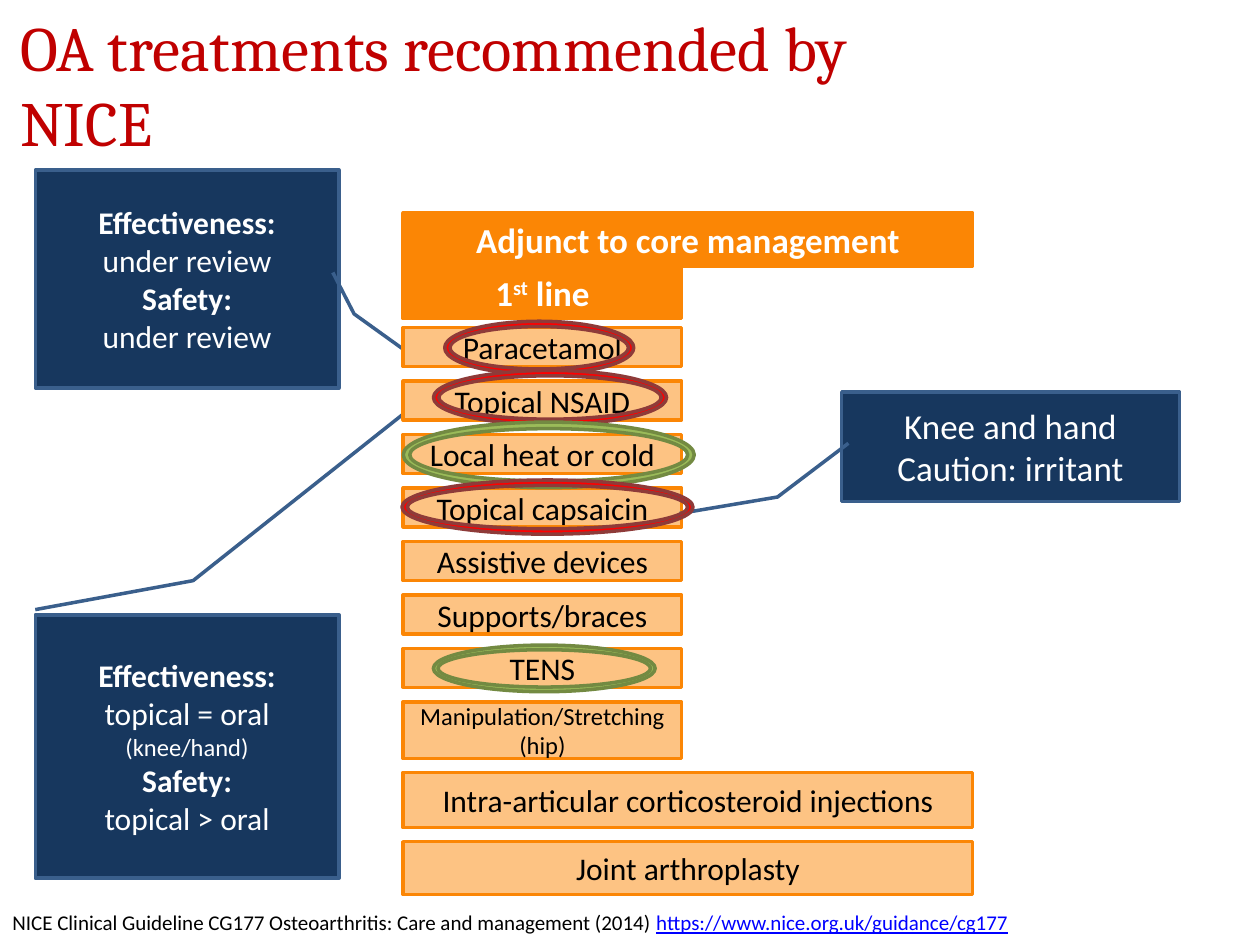
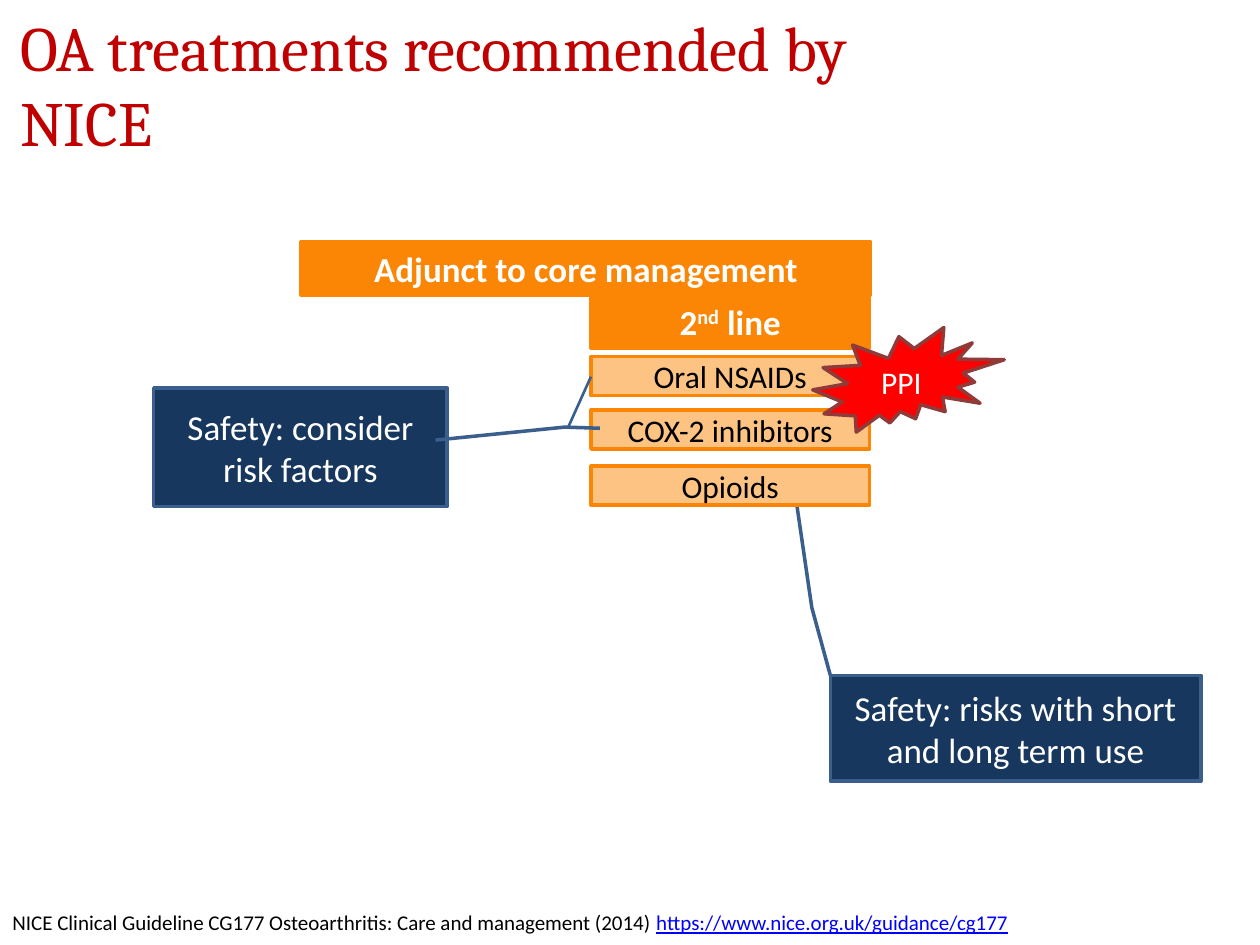
from dataclasses import dataclass

from lxml.etree import SubElement
from pptx import Presentation
from pptx.dml.color import RGBColor as RGB
from pptx.enum.shapes import MSO_CONNECTOR, MSO_SHAPE as SHAPE
from pptx.enum.text import MSO_ANCHOR as ANCHOR, MSO_AUTO_SIZE, PP_ALIGN as ALIGN
from pptx.oxml.ns import qn
from pptx.util import Inches, Pt


@dataclass(frozen=True)
class Theme:
    title_font: str = "Cambria"
    body_font: str = "Calibri"
    title: str = "C00000"
    white: str = "FFFFFF"
    black: str = "000000"
    link: str = "0000FF"
    navy: str = "17375E"
    navy_edge: str = "3A5F8C"
    leader: str = "376092"
    orange: str = "FB8605"
    peach: str = "FDC383"
    red: str = "FF0000"
    red_edge: str = "8E3B39"
    green: str = "9BBB59"
    green_edge: str = "738A42"
    title_size: int = 36
    large: int = 20
    medium: int = 18
    small: int = 14
    footer_size: int = 12
    edge: float = 2
    thin: float = 1.5


THEME = Theme()

# Kind of box: fill, edge
LOOKS = {
    "callout": (THEME.navy, THEME.navy_edge),
    "header": (THEME.orange, THEME.orange),
    "row": (THEME.peach, THEME.orange),
    "red": (THEME.red, THEME.red_edge),
    "green": (THEME.green, THEME.green_edge),
}

# Text style: font values
STYLES = {
    "title": {"name": THEME.title_font, "size": THEME.title_size, "color": THEME.title},
    "header": {"size": THEME.large, "color": THEME.white, "bold": True},
    "row": {"size": THEME.medium, "color": THEME.black},
    "small row": {"size": THEME.small, "color": THEME.black},
    "note": {"size": THEME.large, "color": THEME.white},
    "label": {"size": THEME.medium, "color": THEME.white, "bold": True},
    "value": {"size": THEME.medium, "color": THEME.white},
    "detail": {"size": THEME.small, "color": THEME.white},
    "source": {"size": THEME.footer_size, "color": THEME.black},
    "link": {"size": THEME.footer_size, "color": THEME.link, "underline": True},
}

TITLE = "OA treatments recommended by NICE"
TITLE_AREA = (0.06, 0.04, 7.81, 1.25)
HEADING = "Adjunct to core management"
SOURCE = [
    ("NICE Clinical Guideline CG177 Osteoarthritis: Care and management (2014) ", "source"),
    ("https://www.nice.org.uk/guidance/cg177", "link"),
]
SOURCE_AREA = (0, 7.17, 10, 0.3)

COLUMN_WIDTH, FULL_WIDTH = 2.21, 4.52
HEADER_HEIGHT, ROW_HEIGHT = 0.42, 0.31
FIRST_ROW_DROP = 0.91
ROW_PITCH = 2.97 / 7

# Callout: area, leader as (y, x) shares of the box, paragraphs of (text, style)
SLIDES = [
    {
        "heading": (3.2, 1.69),
        "column": 3.2,
        "ordinal": ("1", "st"),
        "rows": ["Paracetamol", "Topical NSAID", "Local heat or cold", "Topical capsaicin",
                 "Assistive devices", "Supports/braces", "TENS"],
        "tall_rows": [
            ("Manipulation/Stretching (hip)", (3.2, 5.57, COLUMN_WIDTH, 0.45), "small row"),
            ("Intra-articular corticosteroid injections", (3.2, 6.13, FULL_WIDTH, 0.44), "row"),
            ("Joint arthroplasty", (3.2, 6.68, FULL_WIDTH, 0.42), "row"),
        ],
        "back_callouts": [
            ((0.28, 4.88, 2.41, 2.09), (-0.02, 0, -0.13, 0.52, -0.77, 1.22), [
                [("Effectiveness:", "label")],
                [("topical = oral ", "value"), ("(knee/hand)", "detail")],
                [("Safety:", "label")],
                [("topical > oral", "value")],
            ]),
            ((0.28, 1.35, 2.41, 1.73), (0.47, 0.98, 0.66, 1.05, 0.83, 1.22), [
                [("Effectiveness:", "label")],
                [("under review", "value")],
                [("Safety:", "label")],
                [("under review", "value")],
            ]),
        ],
        "front_callouts": [
            ((6.68, 3.11, 2.68, 0.87), (0.47, 0.02, 0.96, -0.19, 1.11, -0.48), [
                [("Knee and hand", "note")],
                [("Caution: irritant", "note")],
            ]),
        ],
        "rings": [
            ((3.53, 2.55, 1.5, 0.42), "red"),
            ((3.44, 2.94, 1.85, 0.43), "red"),
            ((3.44, 5.12, 1.76, 0.37), "green"),
            ((3.2, 3.35, 2.31, 0.52), "green"),
            ((3.19, 3.81, 2.31, 0.43), "red"),
        ],
    },
    {
        "heading": (2.39, 1.92),
        "column": 4.69,
        "ordinal": ("2", "nd"),
        "rows": ["Oral NSAIDs", "COX-2 inhibitors"],
        "tall_rows": [("Opioids", (4.69, 3.7, COLUMN_WIDTH, ROW_HEIGHT), "row")],
        "back_callouts": [
            ((6.59, 5.36, 2.94, 0.84), (0, 0, -0.64, -0.05, -1.6, -0.09),
             [[("Safety: risks with short and long term use", "note")]]),
        ],
        "front_callouts": [
            ((1.22, 3.08, 2.33, 0.94), (0.44, 0.96, 0.33, 1.4, 0.34, 1.52),
             [[("Safety: consider risk factors", "note")]]),
        ],
        "bursts": [("PPI", (6.45, 2.6, 1.52, 0.83))],
        "branches": [((4.51, 3.39), (4.69, 2.99))],
    },
]


def inches(values):
    return [Inches(value) for value in values]


def write(frame, paragraphs, align=ALIGN.CENTER, anchor=ANCHOR.MIDDLE):
    """Fill a text frame; a run is (text, style) or (text, style, baseline)."""
    frame.word_wrap = True
    frame.auto_size = MSO_AUTO_SIZE.NONE
    frame.vertical_anchor = anchor
    for index, runs in enumerate(paragraphs):
        paragraph = frame.add_paragraph() if index else frame.paragraphs[0]
        paragraph.alignment = align
        for text, style, *baseline in runs:
            run = paragraph.add_run()
            run.text = text
            values = {"name": THEME.body_font, **STYLES[style]}
            run.font.color.rgb = RGB.from_string(values.pop("color"))
            values["size"] = Pt(values["size"])
            for name, value in values.items():
                setattr(run.font, name, value)
            if baseline:
                run._r.get_or_add_rPr().set("baseline", str(baseline[0]))


def add_box(slide, kind, area, look, paragraphs=(), adjustments=()):
    shape = slide.shapes.add_shape(kind, *inches(area))
    fill, edge = LOOKS[look]
    shape.shadow.inherit = False
    shape.fill.solid()
    shape.fill.fore_color.rgb = RGB.from_string(fill)
    shape.line.color.rgb = RGB.from_string(edge)
    shape.line.width = Pt(THEME.edge)
    for index, value in enumerate(adjustments):
        shape.adjustments[index] = value
    write(shape.text_frame, paragraphs)


def add_branch(slide, start, end):
    connector = slide.shapes.add_connector(MSO_CONNECTOR.STRAIGHT, *inches(start + end))
    connector.line.color.rgb = RGB.from_string(THEME.leader)
    connector.line.width = Pt(THEME.thin)
    SubElement(connector._element.spPr, qn("a:effectLst"))


def add_callouts(slide, callouts):
    for area, leader, paragraphs in callouts:
        add_box(slide, SHAPE.LINE_CALLOUT_2, area, "callout", paragraphs, leader)


def add_treatments(slide, content):
    """Draw the heading, the line-of-treatment header and the rows below."""
    left, top = content["heading"]
    column = content["column"]
    number, suffix = content["ordinal"]
    add_box(slide, SHAPE.RECTANGLE, (left, top, FULL_WIDTH, HEADER_HEIGHT), "header",
            [[(HEADING, "header")]])
    add_box(slide, SHAPE.RECTANGLE,
            (column, top + HEADER_HEIGHT, COLUMN_WIDTH, HEADER_HEIGHT), "header",
            [[(number, "header"), (suffix, "header", 30000), (" line", "header")]])
    rows = [
        (text, (column, top + FIRST_ROW_DROP + index * ROW_PITCH, COLUMN_WIDTH, ROW_HEIGHT), "row")
        for index, text in enumerate(content["rows"])
    ]
    for text, area, style in rows + content["tall_rows"]:
        add_box(slide, SHAPE.RECTANGLE, area, "row", [[(text, style)]])


def add_title_and_source(slide):
    title = slide.shapes.title
    title.left, title.top, title.width, title.height = inches(TITLE_AREA)
    write(title.text_frame, [[(TITLE, "title")]], ALIGN.LEFT)
    source = slide.shapes.add_textbox(*inches(SOURCE_AREA))
    write(source.text_frame, [SOURCE], ALIGN.LEFT, ANCHOR.TOP)


def build_slide(presentation, content):
    slide = presentation.slides.add_slide(presentation.slide_layouts[5])
    add_title_and_source(slide)
    add_callouts(slide, content["back_callouts"])
    add_treatments(slide, content)
    add_callouts(slide, content["front_callouts"])
    for area, look in content.get("rings", []):
        add_box(slide, SHAPE.DONUT, area, look, adjustments=[0.1])
    for text, area in content.get("bursts", []):
        add_box(slide, SHAPE.EXPLOSION2, area, "red", [[(text, "value")]])
    for start, end in content.get("branches", []):
        add_branch(slide, start, end)


def main():
    presentation = Presentation()
    presentation.slide_width, presentation.slide_height = inches((10, 7.5))
    for content in SLIDES:
        build_slide(presentation, content)
    presentation.save("out.pptx")


if __name__ == "__main__":
    main()
